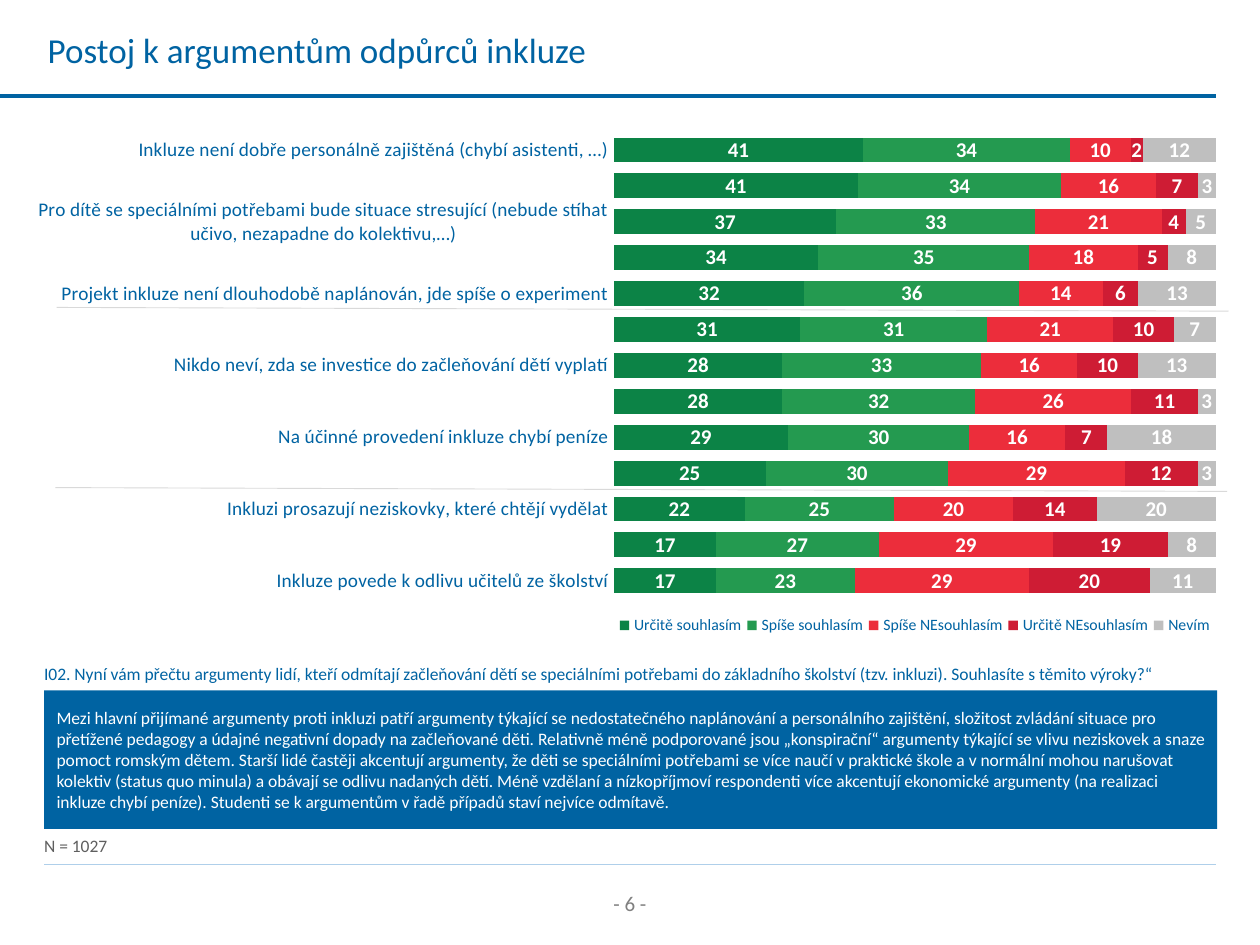
from dataclasses import dataclass

from lxml import etree
from pptx import Presentation
from pptx.chart.data import CategoryChartData
from pptx.dml.color import RGBColor
from pptx.enum.chart import XL_CHART_TYPE as ChartType
from pptx.enum.chart import XL_LABEL_POSITION as LabelPosition
from pptx.enum.chart import XL_LEGEND_POSITION as LegendPosition
from pptx.enum.chart import XL_TICK_LABEL_POSITION as TickLabelPosition
from pptx.enum.chart import XL_TICK_MARK as TickMark
from pptx.enum.shapes import MSO_CONNECTOR as Connector
from pptx.enum.shapes import MSO_SHAPE as Shape
from pptx.enum.text import MSO_ANCHOR as Anchor
from pptx.enum.text import PP_ALIGN as Align
from pptx.oxml.ns import qn
from pptx.util import Inches, Pt


@dataclass(frozen=True)
class Theme:
    font: str = "Calibri"
    blue: str = "0063A2"
    pale_blue: str = "AFCFEA"
    white: str = "FFFFFF"
    gray: str = "808080"
    dark_gray: str = "5F5F5F"
    light_gray: str = "D9D9D9"
    title_size: float = 20
    number_size: float = 12
    body_size: float = 10
    category_size: float = 11
    value_size: float = 12
    legend_size: float = 9


THEME = Theme()

COMMENT = (
    "Mezi hlavní přijímané argumenty proti inkluzi patří argumenty týkající se "
    "nedostatečného naplánování a personálního zajištění, složitost zvládání situace "
    "pro přetížené pedagogy a údajné negativní dopady na začleňované děti. Relativně "
    "méně podporované jsou „konspirační“ argumenty týkající se vlivu neziskovek a snaze "
    "pomoct romským dětem. Starší lidé častěji akcentují argumenty, že děti se "
    "speciálními potřebami se více naučí v praktické škole a v normální mohou narušovat "
    "kolektiv (status quo minula) a obávají se odlivu nadaných dětí. Méně vzdělaní a "
    "nízkopříjmoví respondenti více akcentují ekonomické argumenty (na realizaci inkluze "
    "chybí peníze). Studenti se k argumentům v řadě případů staví nejvíce odmítavě."
)
QUESTION = (
    "I02. Nyní vám přečtu argumenty lidí, kteří odmítají začleňování dětí se speciálními "
    "potřebami do základního školství (tzv. inkluzi). Souhlasíte s těmito výroky?“"
)

# Every other bar carries a label
ARGUMENTS = [
    "Inkluze není dobře personálně zajištěná (chybí asistenti, …)",
    "Pro dítě se speciálními potřebami bude situace stresující (nebude stíhat učivo, nezapadne do kolektivu,…)",
    "Projekt inkluze není dlouhodobě naplánován, jde spíše o experiment",
    "Nikdo neví, zda se investice do začleňování dětí vyplatí",
    "Na účinné provedení inkluze chybí peníze",
    "Inkluzi prosazují neziskovky, které chtějí vydělat",
    "Inkluze povede k odlivu učitelů ze školství",
]
ANSWERS = [
    ("Určitě souhlasím", "0C8346", (41, 41, 37, 34, 32, 31, 28, 28, 29, 25, 22, 17, 17)),
    ("Spíše souhlasím", "249A50", (34, 34, 33, 35, 36, 31, 33, 32, 30, 30, 25, 27, 23)),
    ("Spíše NEsouhlasím", "EC2D3B", (10, 16, 21, 18, 14, 21, 16, 26, 16, 29, 20, 29, 29)),
    ("Určitě NEsouhlasím", "CE1C34", (2, 7, 4, 5, 6, 10, 10, 11, 7, 12, 14, 19, 20)),
    ("Nevím", "BFBFBF", (12, 3, 5, 8, 13, 7, 13, 3, 18, 3, 20, 8, 11)),
]


def style_font(font, size, color, bold=False):
    font.name = THEME.font
    font.size = Pt(size)
    font.bold = bold
    font.color.rgb = RGBColor.from_string(color)


def fill_text(shape, text, size, color, align=Align.LEFT, anchor=Anchor.TOP, left_inset=0.1):
    frame = shape.text_frame
    frame.word_wrap = True
    frame.vertical_anchor = anchor
    frame.margin_left = Inches(left_inset)
    frame.text = text
    paragraph = frame.paragraphs[0]
    paragraph.alignment = align
    style_font(paragraph.runs[0].font, size, color)


def add_text(slide, box, text, size, color, **options):
    shape = slide.shapes.add_textbox(*map(Inches, box))
    fill_text(shape, text, size, color, **options)


def add_panel(slide, box, text):
    shape = slide.shapes.add_shape(Shape.RECTANGLE, *map(Inches, box))
    shape.shadow.inherit = False
    shape.fill.solid()
    shape.fill.fore_color.rgb = RGBColor.from_string(THEME.blue)
    shape.line.fill.background()
    fill_text(shape, text, THEME.body_size, THEME.white, anchor=Anchor.MIDDLE)


def add_line(slide, start, end, color, width):
    line = slide.shapes.add_connector(Connector.STRAIGHT, *map(Inches, start + end))
    line.line.color.rgb = RGBColor.from_string(color)
    line.line.width = Pt(width)
    etree.SubElement(line._element.spPr, qn("a:effectLst"))


def make_layout(parent, x, y, width, height, inner=False):
    """Build a manual layout, in fractions of the chart area."""
    for old in parent.findall(qn("c:layout")):
        parent.remove(old)
    layout = etree.Element(qn("c:layout"))
    manual = etree.SubElement(layout, qn("c:manualLayout"))
    settings = [("layoutTarget", "inner")] if inner else []
    settings += [("xMode", "edge"), ("yMode", "edge"), ("x", x), ("y", y), ("w", width), ("h", height)]
    for tag, value in settings:
        etree.SubElement(manual, qn(f"c:{tag}")).set("val", str(value))
    return layout


def add_answer_chart(slide, box):
    data = CategoryChartData(number_format="0")
    bar_count = len(ANSWERS[0][2])
    data.categories = ["" if bar % 2 else ARGUMENTS[bar // 2] for bar in range(bar_count)]
    for name, _, values in ANSWERS:
        data.add_series(name, values)
    frame = slide.shapes.add_chart(ChartType.BAR_STACKED_100, *map(Inches, box), data)
    chart = frame.chart
    chart.has_title = False
    style_font(chart.font, THEME.body_size, THEME.dark_gray)

    # Bars and their values
    plot = chart.plots[0]
    plot.gap_width, plot.overlap = 44, 100
    plot.vary_by_categories = False
    for series, (_, color, _) in zip(plot.series, ANSWERS):
        series.format.fill.solid()
        series.format.fill.fore_color.rgb = RGBColor.from_string(color)
        labels = series.data_labels
        labels.show_value = True
        labels.position = LabelPosition.CENTER
        labels.number_format, labels.number_format_is_linked = "0", False
        style_font(labels.font, THEME.value_size, THEME.white, bold=True)

    # Axes
    categories = chart.category_axis
    categories.reverse_order = True
    categories.major_tick_mark = categories.minor_tick_mark = TickMark.NONE
    categories.tick_label_position = TickLabelPosition.NEXT_TO_AXIS
    categories.format.line.fill.background()
    style_font(categories.tick_labels.font, THEME.category_size, THEME.blue)
    values = chart.value_axis
    values.has_major_gridlines = False
    values.minimum_scale, values.maximum_scale, values.major_unit = 0, 1, 0.2
    values.visible = False

    # Legend under the bars
    chart.has_legend = True
    legend = chart.legend
    legend.position = LegendPosition.BOTTOM
    legend.include_in_layout = False
    style_font(legend.font, THEME.legend_size, THEME.blue)
    position = legend._element.find(qn("c:legendPos"))
    position.addnext(make_layout(legend._element, 0.49, 0.94, 0.51, 0.06))
    area = chart._chartSpace.find(f".//{qn('c:plotArea')}")
    area.insert(0, make_layout(area, 0.49, 0.04, 0.51, 0.88, inner=True))


def main():
    presentation = Presentation()
    presentation.slide_width, presentation.slide_height = Inches(10), Inches(7.5)
    slide = presentation.slides.add_slide(presentation.slide_layouts[6])

    # Page frame
    add_line(slide, (0.35, 6.86), (9.65, 6.86), THEME.pale_blue, 0.5)
    add_text(slide, (4.37, 7.02, 1.26, 0.3), "- 6 -", THEME.number_size, THEME.gray, align=Align.CENTER)
    add_line(slide, (0, 0.76), (9.65, 0.76), THEME.blue, 2.25)
    add_text(slide, (0.28, 0, 8.92, 0.79), "Postoj k argumentům odpůrců inkluze",
             THEME.title_size, THEME.blue, anchor=Anchor.MIDDLE)

    # Commentary, sample size and question
    add_panel(slide, (0.35, 5.48, 9.31, 1.1), COMMENT)
    add_text(slide, (0.35, 6.58, 6.79, 0.27), "N = 1027", THEME.body_size, THEME.dark_gray, left_inset=0)
    add_text(slide, (0.35, 5.21, 9.31, 0.27), QUESTION, THEME.body_size, THEME.blue, left_inset=0)

    # Chart with lines between groups of arguments
    add_answer_chart(slide, (0.28, 0.88, 9.37, 4.21))
    for right, top in ((9.75, 2.47), (9.74, 3.9)):
        add_line(slide, (right, top), (right - 9.3, top - 0.03), THEME.light_gray, 0.5)

    presentation.save("out.pptx")


if __name__ == "__main__":
    main()
